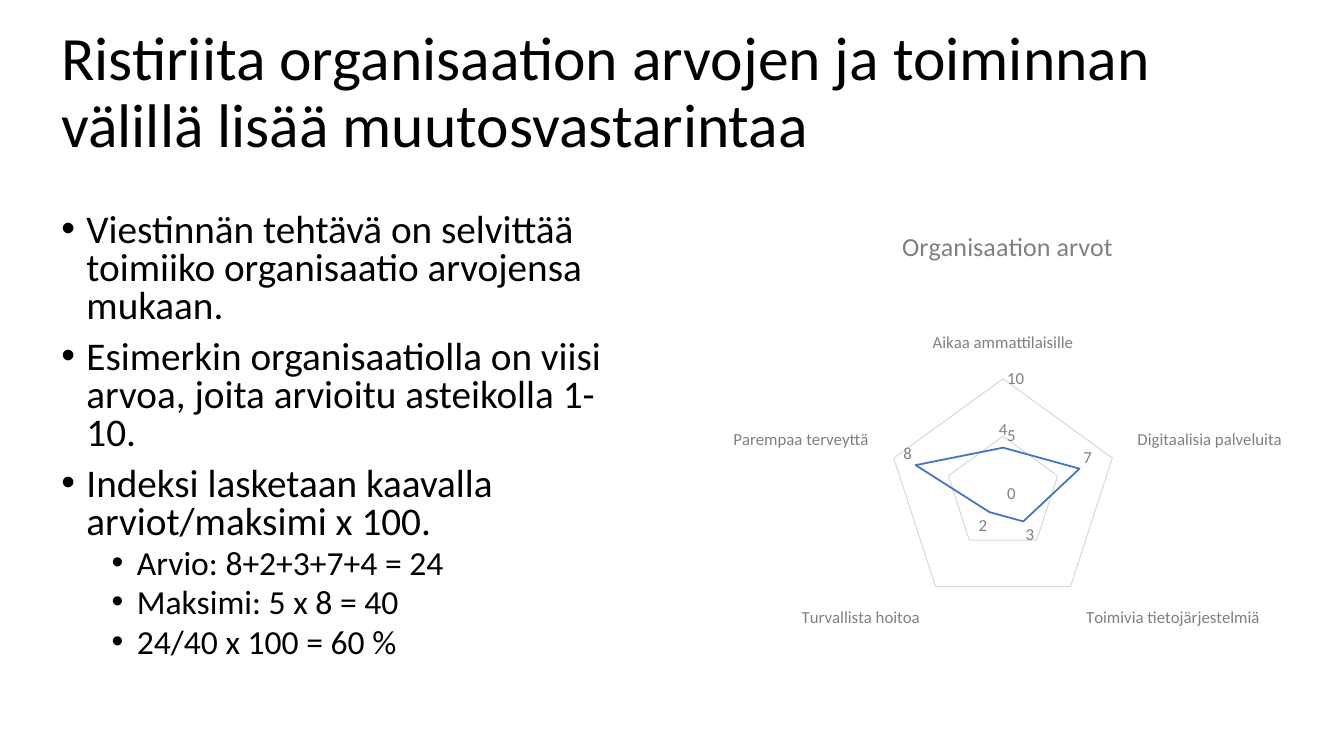
from lxml.etree import SubElement
from pptx import Presentation
from pptx.chart.data import CategoryChartData as ChartData
from pptx.dml.color import RGBColor as Rgb
from pptx.enum.chart import XL_CHART_TYPE as Kind, XL_TICK_MARK as Tick
from pptx.enum.text import MSO_ANCHOR as Anchor
from pptx.oxml.ns import qn
from pptx.util import Inches, Pt

COLORS = {"text": "000000", "label": "808080", "grid": "D9D9D9", "line": "4472C4"}
FONT = "Calibri"
TITLE = "Ristiriita organisaation arvojen ja toiminnan välillä lisää muutosvastarintaa"
POINTS = [
    (0, "Viestinnän tehtävä on selvittää toimiiko organisaatio arvojensa mukaan."),
    (0, "Esimerkin organisaatiolla on viisi arvoa, joita arvioitu asteikolla 1-10."),
    (0, "Indeksi lasketaan kaavalla arviot/maksimi x 100."),
    (1, "Arvio: 8+2+3+7+4 = 24"),
    (1, "Maksimi: 5 x 8 = 40"),
    (1, "24/40 x 100 = 60 %"),
]
LEVELS = [dict(size=28, before=10, indent=0.25), dict(size=24, before=5, indent=0.75)]
VALUES = {
    "Aikaa ammattilaisille": 4,
    "Digitaalisia palveluita": 7,
    "Toimivia tietojärjestelmiä": 3,
    "Turvallista hoitoa": 2,
    "Parempaa terveyttä": 8,
}


def style(font, size, color):
    font.name = FONT
    font.size = Pt(size)
    font.bold = False
    font.color.rgb = Rgb.from_string(COLORS[color])


def stroke(line, color, width):
    line.color.rgb = Rgb.from_string(COLORS[color])
    line.width = Pt(width)


def write(par, text, size=28, color="text", spacing=None, before=0, indent=None):
    run = par.add_run()
    run.text = text
    style(run.font, size, color)
    par.line_spacing = spacing
    par.space_before = Pt(before)
    if indent is not None:
        props = par._p.get_or_add_pPr()
        props.set("marL", str(Inches(indent)))
        props.set("indent", str(Inches(-0.25)))
        SubElement(props, qn("a:buFont")).set("typeface", "Arial")
        SubElement(props, qn("a:buChar")).set("char", "•")


def add_box(slide, box, anchor):
    frame = slide.shapes.add_textbox(*map(Inches, box)).text_frame
    frame.word_wrap = True
    frame.vertical_anchor = anchor
    return frame


def add_title(slide, box):
    frame = add_box(slide, box, Anchor.MIDDLE)
    write(frame.paragraphs[0], TITLE, size=44, spacing=0.9)


def add_points(slide, box):
    frame = add_box(slide, box, Anchor.TOP)
    for i, (level, text) in enumerate(POINTS):
        par = frame.add_paragraph() if i else frame.paragraphs[0]
        par.level = level
        write(par, text, spacing=0.8, **LEVELS[level])


def add_radar(slide, box):
    data = ChartData()
    data.categories = list(VALUES)
    data.add_series("Organisaation arvot", list(VALUES.values()))
    chart = slide.shapes.add_chart(Kind.RADAR, *map(Inches, box), data).chart
    style(chart.font, 10, "text")
    chart.has_legend = False
    chart.has_title = True
    write(chart.chart_title.text_frame.paragraphs[0], "Organisaation arvot",
          size=18.6, color="label")

    cats, vals = chart.category_axis, chart.value_axis
    for axis in (cats, vals):
        axis.major_tick_mark = axis.minor_tick_mark = Tick.NONE
        style(axis.tick_labels.font, 12, "label")
    cats.has_major_gridlines = False
    stroke(cats.format.line, "grid", 0.75)
    vals.minimum_scale, vals.maximum_scale, vals.major_unit = 0, 10, 5
    vals.format.line.fill.background()
    stroke(vals.major_gridlines.format.line, "grid", 0.75)

    series = chart.plots[0].series[0]
    series.smooth = False
    stroke(series.format.line, "line", 1.25)
    labels = series.data_labels
    labels.show_value = True
    style(labels.font, 12, "label")


def main():
    deck = Presentation()
    deck.slide_width, deck.slide_height = Inches(13.33), Inches(7.5)
    slide = deck.slides.add_slide(deck.slide_layouts[6])
    left, top, width, height = 0.51, 2.07, 5.67, 4.76
    add_title(slide, (left, 0.21, 11.5, 1.45))
    add_radar(slide, (7.16, top, width, height))
    add_points(slide, (left, top, width, height))
    deck.save("out.pptx")


if __name__ == "__main__":
    main()
